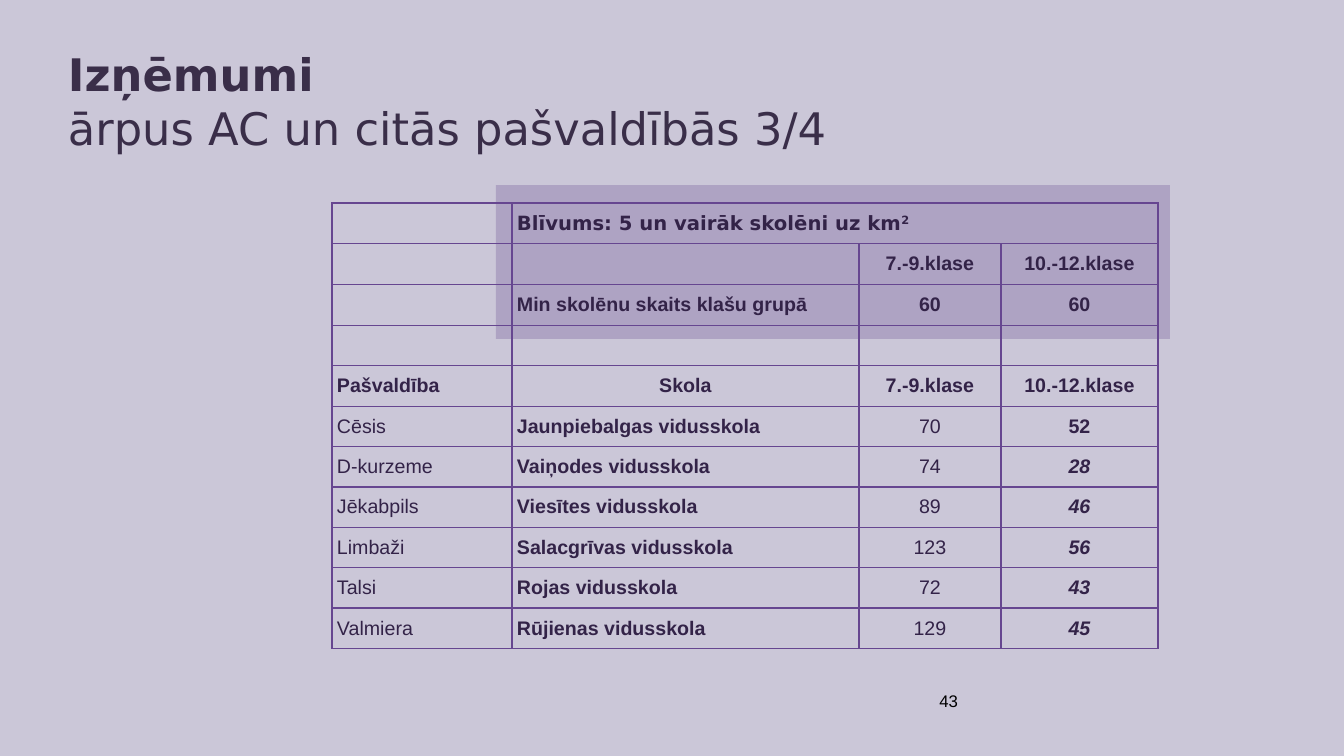
from dataclasses import dataclass

from lxml import etree
from pptx import Presentation
from pptx.dml.color import RGBColor
from pptx.enum.shapes import MSO_SHAPE
from pptx.enum.text import MSO_ANCHOR, PP_ALIGN
from pptx.oxml.ns import qn
from pptx.util import Pt

RECTANGLE = MSO_SHAPE.RECTANGLE
TOP, MIDDLE = MSO_ANCHOR.TOP, MSO_ANCHOR.MIDDLE
LEFT, CENTER, RIGHT = PP_ALIGN.LEFT, PP_ALIGN.CENTER, PP_ALIGN.RIGHT
EMU_PER_PX = 914400 / 100.8


@dataclass(frozen=True)
class Theme:
    background: str = "CBC7D8"
    accent: str = "664690"
    title: str = "3A2E49"
    table_text: str = "332348"
    number: str = "000000"
    heading_font: str = "DejaVu Sans"
    body_font: str = "Arial"
    title_size: int = 32
    table_size: int = 14
    number_size: int = 12
    margin: int = 5


def px(length):
    return round(length * EMU_PER_PX)


class SlideBuilder:
    def __init__(self, deck, theme):
        self.theme = theme
        self.slide = deck.slides.add_slide(deck.slide_layouts[6])
        fill = self.slide.background.fill
        fill.solid()
        fill.fore_color.rgb = RGBColor.from_string(theme.background)

    def style(self, span, font, size, color, bold=False, italic=False):
        span.font.name = font
        span.font.size = Pt(size)
        span.font.color.rgb = RGBColor.from_string(color)
        span.font.bold = bold
        span.font.italic = italic

    def set_margins(self, holder):
        holder.margin_left = holder.margin_right = px(self.theme.margin)
        holder.margin_top = holder.margin_bottom = px(self.theme.margin)

    def panel(self, left, top, width, height, color, opacity):
        shape = self.slide.shapes.add_shape(RECTANGLE, px(left), px(top), px(width), px(height))
        shape.shadow.inherit = False
        shape.line.fill.background()
        shape.fill.solid()
        shape.fill.fore_color.rgb = RGBColor.from_string(color)
        color_node = next(shape.fill._xPr.iter(qn("a:srgbClr")))
        etree.SubElement(color_node, qn("a:alpha"), val=str(opacity * 1000))

    def text(self, left, top, width, height, content, font, size, color,
             align=LEFT, anchor=TOP, bold_lines=()):
        box = self.slide.shapes.add_textbox(px(left), px(top), px(width), px(height))
        frame = box.text_frame
        frame.word_wrap = True
        frame.vertical_anchor = anchor
        self.set_margins(frame)
        frame.text = content
        for index, para in enumerate(frame.paragraphs):
            para.alignment = align
            for span in para.runs:
                self.style(span, font, size, color, bold=index in bold_lines)

    def border(self, cell):
        properties = cell._tc.get_or_add_tcPr()
        for index, side in enumerate(("a:lnL", "a:lnR", "a:lnT", "a:lnB")):
            line = etree.Element(qn(side), w=str(Pt(1)))
            fill = etree.SubElement(line, qn("a:solidFill"))
            etree.SubElement(fill, qn("a:srgbClr"), val=self.theme.accent)
            properties.insert(index, line)

    def table(self, left, top, widths, height, rows, cell_style):
        frame = self.slide.shapes.add_table(
            len(rows), len(widths), px(left), px(top), px(sum(widths)), px(height))
        table = frame.table
        table.first_row = table.horz_banding = False
        for column, width in zip(table.columns, widths):
            column.width = px(width)
        for row in table.rows:
            row.height = px(height / len(rows))
        for row_index, values in enumerate(rows):
            for column_index, value in enumerate(values):
                cell = table.cell(row_index, column_index)
                cell.fill.background()
                cell.vertical_anchor = MIDDLE
                self.set_margins(cell)
                self.border(cell)
                cell.text = value
                para = cell.text_frame.paragraphs[0]
                align, bold, italic = cell_style(row_index, column_index, value)
                para.alignment = align
                for span in para.runs:
                    self.style(span, self.theme.body_font, self.theme.table_size,
                               self.theme.table_text, bold, italic)
        return table

    def density_heading(self, table, content, exponent):
        cell = table.cell(0, 1)
        cell.merge(table.cell(0, 3))
        para = cell.text_frame.paragraphs[0]
        para.text = content
        power = para.add_run()
        power.text = exponent
        for span in para.runs:
            self.style(span, self.theme.heading_font, self.theme.table_size,
                       self.theme.table_text, bold=True)
        power.font._element.set("baseline", "30000")


GRADES = ["7.-9.klase", "10.-12.klase"]
MINIMUM = 60
SCHOOLS = [
    ("Cēsis", "Jaunpiebalgas vidusskola", 70, 52),
    ("D-kurzeme", "Vaiņodes vidusskola", 74, 28),
    ("Jēkabpils", "Viesītes vidusskola", 89, 46),
    ("Limbaži", "Salacgrīvas vidusskola", 123, 56),
    ("Talsi", "Rojas vidusskola", 72, 43),
    ("Valmiera", "Rūjienas vidusskola", 129, 45),
]
HEADER = ["Pašvaldība", "Skola", *GRADES]
ROWS = [
    [""] * 4,
    ["", "", *GRADES],
    ["", "Min skolēnu skaits klašu grupā", str(MINIMUM), str(MINIMUM)],
    [""] * 4,
    HEADER,
    *[[str(value) for value in school] for school in SCHOOLS],
]
FIRST_SCHOOL = ROWS.index(HEADER) + 1


def school_style(row, column, value):
    centered = column > 1 or value == "Skola"
    bold = row < FIRST_SCHOOL or column in (1, 3)
    italic = row > FIRST_SCHOOL and column == 3
    return CENTER if centered else LEFT, bold, italic


def main():
    theme = Theme()
    deck = Presentation()
    deck.slide_width, deck.slide_height = px(1344), px(756)
    page = SlideBuilder(deck, theme)
    page.panel(496, 185, 674, 154, theme.accent, 28)
    table = page.table(332, 203, [180, 347, 142, 157], 444, ROWS, school_style)
    page.density_heading(table, "Blīvums: 5 un vairāk skolēni uz km", "2")
    page.text(63, 42, 1228, 119, "Izņēmumi\nārpus AC un citās pašvaldībās 3/4",
              theme.heading_font, theme.title_size, theme.title, bold_lines=(0,))
    page.text(649, 681, 314, 40, "43", theme.body_font, theme.number_size,
              theme.number, align=RIGHT, anchor=MIDDLE)
    deck.save("out.pptx")


if __name__ == "__main__":
    main()
